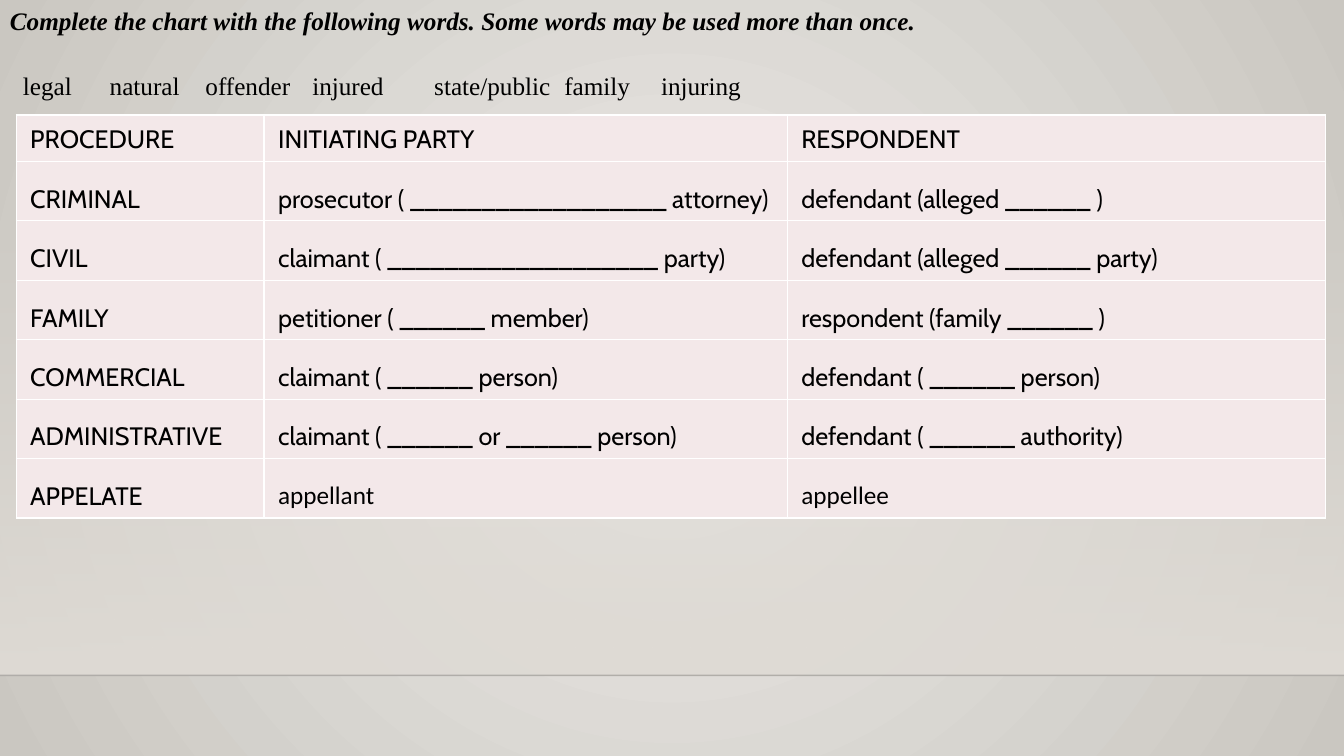
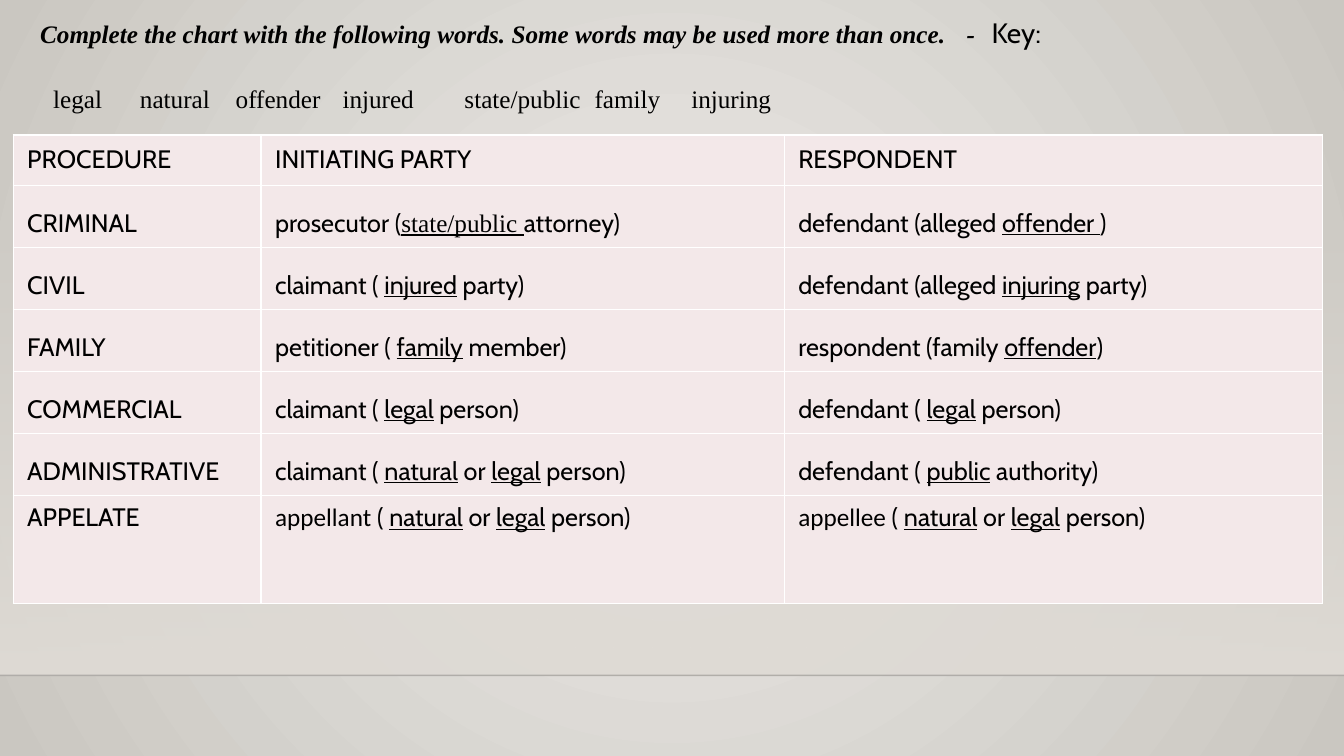
from dataclasses import dataclass

from lxml import etree
from pptx import Presentation
from pptx.dml.color import RGBColor
from pptx.enum.shapes import MSO_CONNECTOR, MSO_SHAPE
from pptx.enum.text import PP_ALIGN
from pptx.oxml.ns import qn
from pptx.util import Emu, Inches, Pt

RECTANGLE = MSO_SHAPE.RECTANGLE
STRAIGHT = MSO_CONNECTOR.STRAIGHT
JUSTIFY = PP_ALIGN.JUSTIFY
LEFT = PP_ALIGN.LEFT


@dataclass(frozen=True)
class Theme:
    ink: str = "000000"
    centre: str = "ECEAE7"
    edge: str = "CAC7C1"
    band: str = "DFDBD5"
    floor: str = "000001"
    cell: str = "F3E8E9"
    border: str = "FFFFFF"
    sans: str = "Cabin"
    serif: str = "Times New Roman"
    plain: str = "Calibri"
    body_size: int = 18
    key_size: int = 20
    hairline: int = 1


@dataclass(frozen=True)
class Span:
    text: str
    underline: bool = False
    font: str | None = None


@dataclass(frozen=True)
class Exercise:
    """One slide; positions and row heights are in grid units."""
    heading_at: tuple[float, float]
    table_at: tuple[float, float]
    row_heights: list[float]
    rows: list[tuple]
    is_key: bool = False
    last_spacing: float = 1.5


THEME = Theme()
GRID = Inches(0.1)
PAGE_COLUMNS, PAGE_ROWS = 133.33, 75
BAND_TOP, FLOOR_ROW = 22.1, 67
HEADING_WIDTH, HEADING_HEIGHT = 129.6, 10.5
TABLE_COLUMNS = [24.6, 51.9, 53.4]
CELL_INSET = 0.7
HEADER_SPACING, BODY_SPACING = 1.07, 1.5
WORD_GAP = 23.5
WORD_TABS = [1.3, 9.9, 19.4, 30, 42.1, 55, 64.6]
KEY_TABS = [91.9, 94.4]

INSTRUCTION = ("Complete the chart with the following words. "
               "Some words may be used more than once.")
WORDS = ["legal", "natural", "offender", "injured", "state/public", "family", "injuring"]
HEADER = ("PROCEDURE", "INITIATING PARTY", "RESPONDENT")
EITHER_PERSON = "( *natural* or *legal* person)"


def units(count: float) -> Emu:
    return Emu(round(count * GRID))


def colour(value: str) -> RGBColor:
    return RGBColor.from_string(value)


def marked(text: str) -> list[Span]:
    """Split text into spans; parts between asterisks are underlined."""
    return [Span(part, index % 2 == 1) for index, part in enumerate(text.split("*")) if part]


EXERCISES = [
    Exercise(
        heading_at=(0, 0), table_at=(1.6, 11.4), row_heights=[4.6] + [5.9] * 6,
        rows=[
            HEADER,
            ("CRIMINAL", "prosecutor ( __________________ attorney)",
             "defendant (alleged ______ )"),
            ("CIVIL", "claimant ( ___________________ party)",
             "defendant (alleged ______ party)"),
            ("FAMILY", "petitioner ( ______ member)", "respondent (family ______ )"),
            ("COMMERCIAL", "claimant ( ______ person)", "defendant ( ______ person)"),
            ("ADMINISTRATIVE", "claimant ( ______ or ______ person)",
             "defendant ( ______ authority)"),
            ("APPELATE", [Span("appellant", font=THEME.plain)],
             [Span("appellee", font=THEME.plain)]),
        ]),
    Exercise(
        heading_at=(3, 1), table_at=(1.3, 13.4), row_heights=[5] + [6.15] * 5 + [10.7],
        is_key=True, last_spacing=1.0,
        rows=[
            HEADER,
            ("CRIMINAL",
             [Span("prosecutor ("), Span("state/public ", True, THEME.serif), Span("attorney)")],
             "defendant (alleged *offender *)"),
            ("CIVIL", "claimant ( *injured* party)", "defendant (alleged *injuring* party)"),
            ("FAMILY", "petitioner ( *family* member)", "respondent (family *offender*)"),
            ("COMMERCIAL", "claimant ( *legal* person)", "defendant ( *legal* person)"),
            ("ADMINISTRATIVE", "claimant ( *natural* or *legal* person)",
             "defendant ( *public* authority)"),
            ("APPELATE", [Span("appellant ", font=THEME.plain), *marked(EITHER_PERSON)],
             [Span("appellee ", font=THEME.plain), *marked(EITHER_PERSON)]),
        ]),
]


def set_gradient(fill, first: str, last: str) -> None:
    fill.gradient()
    for stop, value in zip(fill.gradient_stops, (first, last)):
        stop.color.rgb = colour(value)


def set_alpha(element, percent: int) -> None:
    """Make the first RGB colour inside the element transparent."""
    rgb = next(element.iter(qn("a:srgbClr")))
    etree.SubElement(rgb, qn("a:alpha"), val=str(percent * 1000))


def set_backdrop(master) -> None:
    set_gradient(master.background.fill, THEME.centre, THEME.edge)
    gradient = next(master.element.iter(qn("a:gradFill")))
    gradient.remove(gradient.find(qn("a:lin")))
    circle = etree.SubElement(gradient, qn("a:path"), path="circle")
    etree.SubElement(circle, qn("a:fillToRect"), l="50000", t="50000", r="50000", b="50000")


def add_floor(page) -> None:
    """Draw the fading band and the thin line it ends on."""
    band = page.shapes.add_shape(RECTANGLE, 0, units(BAND_TOP), units(PAGE_COLUMNS),
                                 units(FLOOR_ROW - BAND_TOP))
    band.shadow.inherit = False
    band.line.fill.background()
    set_gradient(band.fill, THEME.band, THEME.band)
    band.fill.gradient_angle = 270
    set_alpha(band.element, 0)

    line = page.shapes.add_connector(STRAIGHT, 0, units(FLOOR_ROW),
                                     units(PAGE_COLUMNS), units(FLOOR_ROW))
    line.line.color.rgb = colour(THEME.floor)
    line.line.width = Pt(THEME.hairline)
    set_alpha(line.element, 20)
    etree.SubElement(line.element.spPr, qn("a:effectLst"))


def set_tabs(para, stops: list[float]) -> None:
    tabs = etree.SubElement(para._p.get_or_add_pPr(), qn("a:tabLst"))
    for stop in stops:
        etree.SubElement(tabs, qn("a:tab"), pos=str(units(stop)), algn="l")


def set_font(para, name: str) -> None:
    para.font.name = name
    para.font.size = Pt(THEME.body_size)
    para.font.color.rgb = colour(THEME.ink)


def add_heading(page, exercise: Exercise) -> None:
    left, top = exercise.heading_at
    box = page.shapes.add_textbox(units(left), units(top), units(HEADING_WIDTH),
                                  units(HEADING_HEIGHT))
    frame = box.text_frame
    frame.word_wrap = True
    title = frame.paragraphs[0]
    title.alignment = LEFT
    if exercise.is_key:
        set_tabs(title, KEY_TABS)
    set_font(title, THEME.serif)
    instruction = title.add_run()
    instruction.text = INSTRUCTION + ("\t-\t" if exercise.is_key else "")
    instruction.font.bold = instruction.font.italic = True
    if exercise.is_key:
        key = title.add_run()
        key.text = "Key:"
        key.font.name = THEME.sans
        key.font.size = Pt(THEME.key_size)

    words = frame.add_paragraph()
    words.alignment = LEFT
    words.line_spacing = HEADER_SPACING
    words.space_before = Pt(WORD_GAP)
    set_tabs(words, WORD_TABS)
    set_font(words, THEME.serif)
    words.add_run().text = "".join(f"\t{word}" for word in WORDS)


def style_cell(cell) -> None:
    properties = cell._tc.get_or_add_tcPr()
    for side in ("lnL", "lnR", "lnT", "lnB"):
        border = etree.SubElement(properties, qn(f"a:{side}"), w=str(Pt(THEME.hairline)))
        paint = etree.SubElement(border, qn("a:solidFill"))
        etree.SubElement(paint, qn("a:srgbClr"), val=THEME.border)
    cell.fill.solid()
    cell.fill.fore_color.rgb = colour(THEME.cell)
    inset = units(CELL_INSET)
    cell.margin_left = cell.margin_right = cell.margin_top = cell.margin_bottom = inset


def write_cell(cell, content: str | list[Span], spacing: float) -> None:
    para = cell.text_frame.paragraphs[0]
    para.alignment = JUSTIFY
    para.line_spacing = spacing
    properties = para._p.get_or_add_pPr()
    properties.set("marL", str(units(CELL_INSET)))
    properties.set("indent", "0")
    set_font(para, THEME.sans)
    for span in marked(content) if isinstance(content, str) else content:
        run = para.add_run()
        run.text = span.text
        if span.underline:
            run.font.underline = True
        if span.font:
            run.font.name = span.font


def add_procedures(page, exercise: Exercise) -> None:
    left, top = exercise.table_at
    frame = page.shapes.add_table(len(exercise.rows), len(TABLE_COLUMNS), units(left), units(top),
                                  units(sum(TABLE_COLUMNS)), units(sum(exercise.row_heights)))
    table = frame.table
    table.first_row = table.horz_banding = False
    for column, width in zip(table.columns, TABLE_COLUMNS):
        column.width = units(width)
    middle = [BODY_SPACING] * (len(exercise.rows) - 2)
    spacings = [HEADER_SPACING, *middle, exercise.last_spacing]
    for row, height, contents, spacing in zip(table.rows, exercise.row_heights,
                                              exercise.rows, spacings):
        row.height = units(height)
        for cell, content in zip(row.cells, contents):
            style_cell(cell)
            write_cell(cell, content, spacing)


def main() -> None:
    deck = Presentation()
    deck.slide_width, deck.slide_height = units(PAGE_COLUMNS), units(PAGE_ROWS)
    set_backdrop(deck.slide_master)
    blank = deck.slide_layouts[6]
    for exercise in EXERCISES:
        page = deck.slides.add_slide(blank)
        add_floor(page)
        add_heading(page, exercise)
        add_procedures(page, exercise)
    deck.save("out.pptx")


if __name__ == "__main__":
    main()
